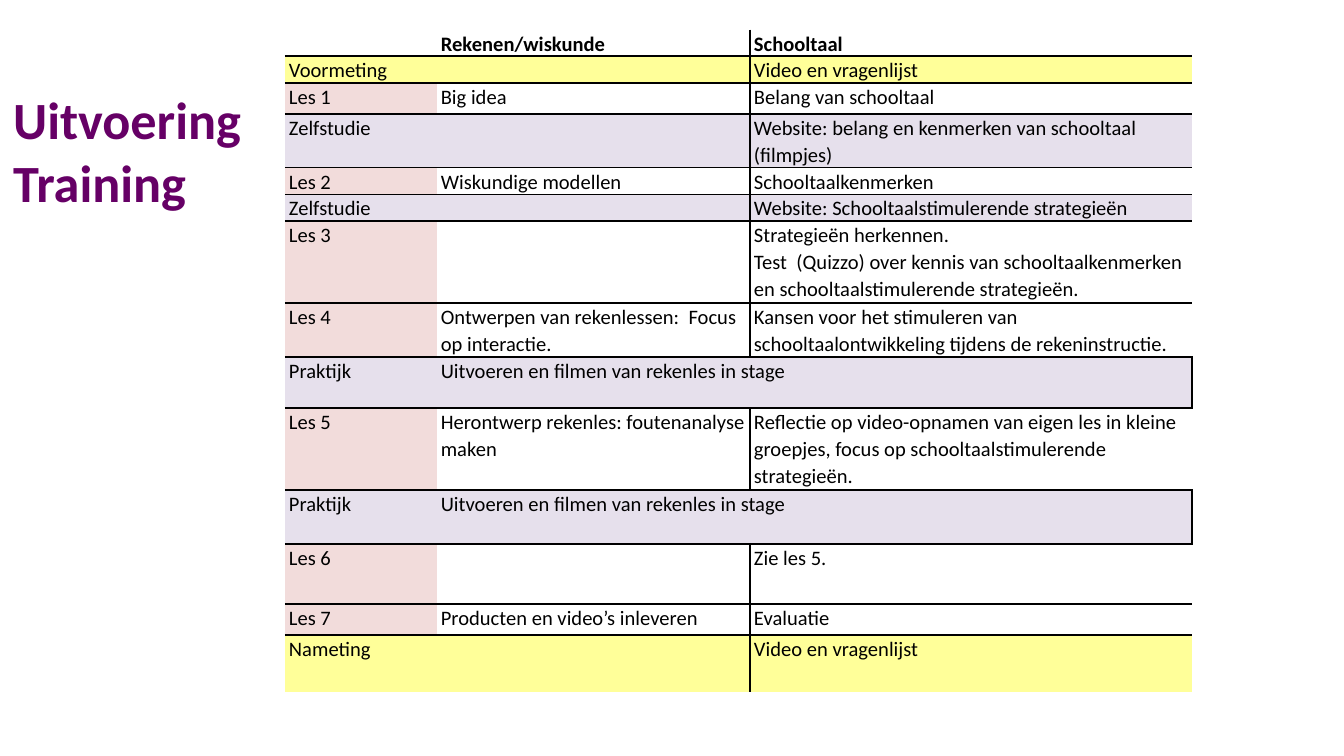
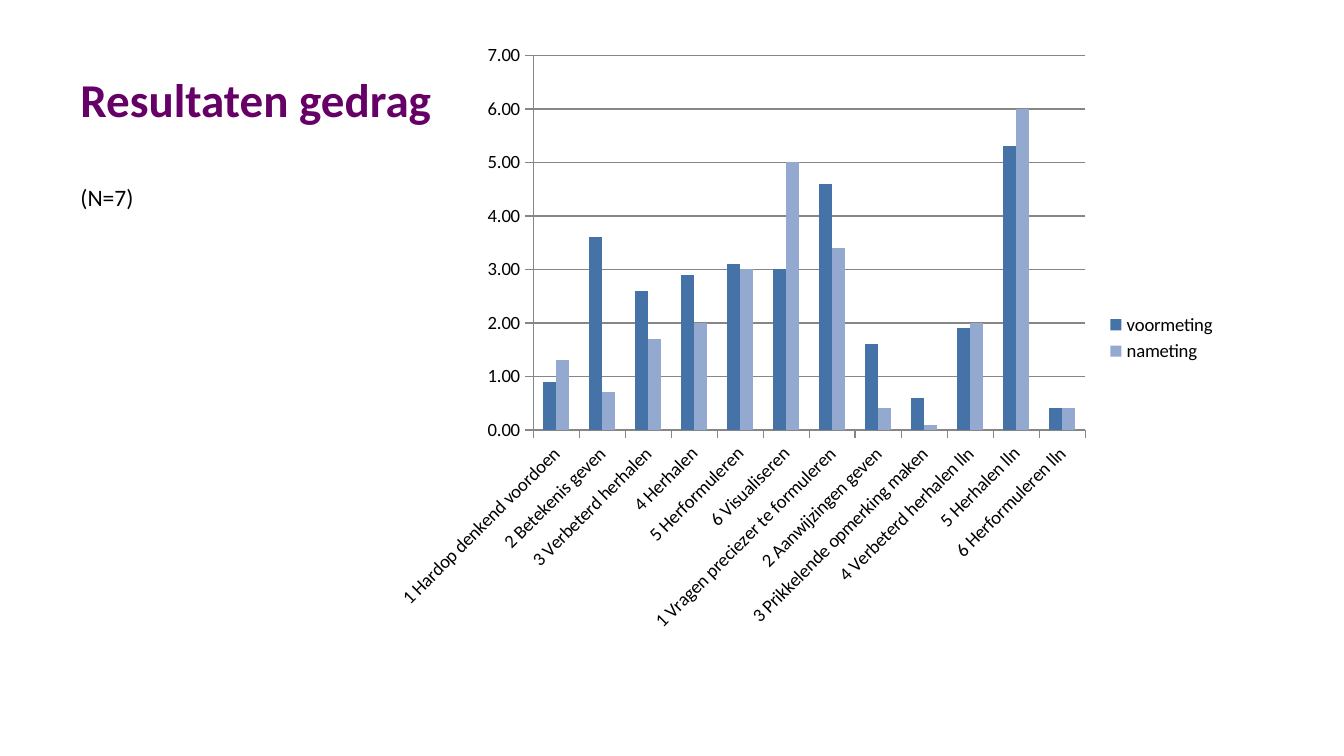
from dataclasses import dataclass
from enum import Enum
from typing import NamedTuple

from lxml import etree
from pptx import Presentation
from pptx.chart.data import CategoryChartData
from pptx.dml.color import RGBColor
from pptx.enum import chart as ch, text
from pptx.oxml import ns, parse_xml
from pptx.util import Inches, Pt


@dataclass(frozen=True)
class Theme:
    font: str = "Calibri"
    title: RGBColor = RGBColor(0x66, 0x00, 0x66)
    ink: RGBColor = RGBColor(0, 0, 0)
    paper: RGBColor = RGBColor(0xFF, 0xFF, 0xFF)
    yellow: RGBColor = RGBColor(0xFF, 0xFF, 0x99)
    pink: RGBColor = RGBColor(0xF2, 0xDC, 0xDB)
    lilac: RGBColor = RGBColor(0xE6, 0xE0, 0xEC)
    grid: RGBColor = RGBColor(0x86, 0x86, 0x86)
    before: RGBColor = RGBColor(0x45, 0x72, 0xA7)
    after: RGBColor = RGBColor(0x93, 0xA9, 0xCF)
    title_size: float = 28
    chart_title_size: float = 25.2
    note_size: float = 12.6
    table_size: float = 11
    chart_size: float = 10


THEME = Theme()


class Kind(Enum):
    """Fills of the label cell and of the other cells in a row."""
    HEADER = (THEME.paper, THEME.paper)
    MEASUREMENT = (THEME.yellow, THEME.yellow)
    LESSON = (THEME.pink, THEME.paper)
    PRACTICE = (THEME.lilac, THEME.lilac)


class Row(NamedTuple):
    kind: Kind
    height: float
    label: str
    maths: str = ""
    language: str = ""
    merged: bool = False


class Line(NamedTuple):
    text: str
    size: float
    color: RGBColor
    bold: bool = True
    before: float = 0


class Series(NamedTuple):
    name: str
    color: RGBColor
    values: tuple[float, ...]


FILMING = "Uitvoeren en filmen van rekenles in stage"
COLUMNS = (1.13, 2.33, 3.29)
ROWS = (
    Row(Kind.HEADER, 0.19, "", "Rekenen/wiskunde", "Schooltaal"),
    Row(Kind.MEASUREMENT, 0.2, "Voormeting", "", "Video en vragenlijst"),
    Row(Kind.LESSON, 0.23, "Les 1", "Big idea", "Belang van schooltaal"),
    Row(Kind.PRACTICE, 0.4, "Zelfstudie", "",
        "Website: belang en kenmerken van schooltaal (filmpjes)"),
    Row(Kind.LESSON, 0.2, "Les 2", "Wiskundige modellen", "Schooltaalkenmerken"),
    Row(Kind.PRACTICE, 0.2, "Zelfstudie", "",
        "Website: Schooltaalstimulerende strategieën"),
    Row(Kind.LESSON, 0.61, "Les 3", "",
        "Strategieën herkennen.\nTest  (Quizzo) over kennis van "
        "schooltaalkenmerken en schooltaalstimulerende strategieën."),
    Row(Kind.LESSON, 0.4, "Les 4", "Ontwerpen van rekenlessen:  Focus op interactie.",
        "Kansen voor het stimuleren van schooltaalontwikkeling tijdens de "
        "rekeninstructie."),
    Row(Kind.PRACTICE, 0.38, "Praktijk", FILMING, merged=True),
    Row(Kind.LESSON, 0.61, "Les 5", "Herontwerp rekenles: foutenanalyse maken",
        "Reflectie op video-opnamen van eigen les in kleine groepjes, focus op "
        "schooltaalstimulerende strategieën."),
    Row(Kind.PRACTICE, 0.4, "Praktijk", FILMING, merged=True),
    Row(Kind.LESSON, 0.45, "Les 6", "", "Zie les 5."),
    Row(Kind.LESSON, 0.23, "Les 7", "Producten en video’s inleveren", "Evaluatie"),
    Row(Kind.MEASUREMENT, 0.42, "Nameting", "", "Video en vragenlijst"),
)

CATEGORIES = (
    "1 Hardop denkend voordoen", "2 Betekenis geven", "3 Verbeterd herhalen",
    "4 Herhalen", "5 Herformuleren", "6 Visualiseren",
    "1 Vragen preciezer te formuleren", "2 Aanwijzingen geven",
    "3 Prikkelende opmerking maken", "4 Verbeterd herhalen lln",
    "5 Herhalen lln", "6 Herformuleren lln",
)
SERIES = (
    Series("voormeting", THEME.before,
           (0.9, 3.6, 2.6, 2.9, 3.1, 3, 4.6, 1.6, 0.6, 1.9, 5.3, 0.4)),
    Series("nameting", THEME.after,
           (1.3, 0.7, 1.7, 2, 3, 5, 3.4, 0.4, 0.1, 2, 6, 0.4)),
)


def style_font(font, size: float, color: RGBColor = THEME.ink, bold: bool = False) -> None:
    font.name, font.size, font.bold = THEME.font, Pt(size), bold
    font.color.rgb = color


def add_title(s, left: float, top: float, width: float, height: float, *lines: Line) -> None:
    box = s.shapes.add_textbox(Inches(left), Inches(top), Inches(width), Inches(height))
    tf = box.text_frame
    tf.word_wrap = True
    tf.vertical_anchor = text.MSO_ANCHOR.MIDDLE
    for i, line in enumerate(lines):
        p = tf.add_paragraph() if i else tf.paragraphs[0]
        p.text = line.text
        if line.before:
            p.space_before = Pt(line.before)
        style_font(p.font, line.size, line.color, line.bold)


def set_borders(cell, sides: str) -> None:
    """Draw the named sides (of L, R, T, B) and clear the others."""
    props = cell._tc.get_or_add_tcPr()
    for side in "LRTB":
        ln = etree.SubElement(props, ns.qn(f"a:ln{side}"), w=str(Pt(1)))
        if side in sides:
            fill = etree.SubElement(ln, ns.qn("a:solidFill"))
            etree.SubElement(fill, ns.qn("a:srgbClr"), val=str(THEME.ink))
        else:
            etree.SubElement(ln, ns.qn("a:noFill"))


def fill_cell(cell, content: str, fill: RGBColor, bold: bool, sides: str) -> None:
    set_borders(cell, sides)
    cell.fill.solid()
    cell.fill.fore_color.rgb = fill
    cell.margin_left = cell.margin_right = Inches(0.03)
    cell.margin_top = cell.margin_bottom = 0
    cell.text_frame.text = content
    for p in cell.text_frame.paragraphs:
        p.line_spacing = 1.07
        style_font(p.font, THEME.table_size, bold=bold)
        if not content:
            p._p.get_or_add_endParaRPr().set("sz", str(THEME.table_size * 100))


def add_programme(s) -> None:
    frame = s.shapes.add_table(len(ROWS), len(COLUMNS), Inches(2.12), Inches(0.22),
                               Inches(sum(COLUMNS)), Inches(sum(r.height for r in ROWS)))
    table = frame.table
    table.first_row = table.horz_banding = False
    for column, width in zip(table.columns, COLUMNS):
        column.width = Inches(width)
    for i, row in enumerate(ROWS):
        table.rows[i].height = Inches(row.height)
        across = ("T" if i else "") + ("B" if i < len(ROWS) - 1 else "")
        upright = ("", "R", "R" if row.merged else "L")
        label_fill, fill = row.kind.value
        for j, content in enumerate((row.label, row.maths, row.language)):
            fill_cell(table.cell(i, j), content, fill if j else label_fill,
                      row.kind is Kind.HEADER, upright[j] + across)
        if row.merged:
            table.cell(i, 1).merge(table.cell(i, 2))


def set_plot_layout(chart, **fractions: float) -> None:
    """Fix the inner plot area, in fractions of the chart frame."""
    area = chart._chartSpace.chart.plotArea
    for old in area.findall(ns.qn("c:layout")):
        area.remove(old)
    values = "".join(f'<c:{k} val="{v}"/>' for k, v in fractions.items())
    area.insert(0, parse_xml(
        f'<c:layout {ns.nsdecls("c")}><c:manualLayout><c:layoutTarget val="inner"/>'
        f'<c:xMode val="edge"/><c:yMode val="edge"/>{values}'
        '</c:manualLayout></c:layout>'))


def add_results(s) -> None:
    data = CategoryChartData(number_format="0.00")
    data.categories = CATEGORIES
    for series in SERIES:
        data.add_series(series.name, series.values)
    chart = s.shapes.add_chart(ch.XL_CHART_TYPE.COLUMN_CLUSTERED, Inches(2.83), Inches(0.23),
                               Inches(6.32), Inches(4.57), data).chart
    style_font(chart.font, THEME.chart_size)
    chart.has_title = False
    chart.has_legend = True
    chart.legend.position = ch.XL_LEGEND_POSITION.RIGHT
    chart.legend.include_in_layout = False
    set_plot_layout(chart, x=0.18, y=0.04, w=0.65, h=0.61)

    plot = chart.plots[0]
    plot.gap_width, plot.overlap, plot.vary_by_categories = 150, 0, False
    for drawn, series in zip(plot.series, SERIES):
        drawn.format.fill.solid()
        drawn.format.fill.fore_color.rgb = series.color

    cat, val = chart.category_axis, chart.value_axis
    for axis in (cat, val):
        axis.major_tick_mark = ch.XL_TICK_MARK.OUTSIDE
        axis.minor_tick_mark = ch.XL_TICK_MARK.NONE
        axis.format.line.color.rgb = THEME.grid
        style_font(axis.tick_labels.font, THEME.chart_size)
    cat._element.txPr.bodyPr.set("rot", str(-45 * 60000))
    val.minimum_scale, val.maximum_scale, val.major_unit = 0, 7, 1
    val.has_major_gridlines = True
    val.major_gridlines.format.line.color.rgb = THEME.grid
    val.tick_labels.number_format = "0.00"
    val.tick_labels.number_format_is_linked = False


def main() -> None:
    prs = Presentation()
    prs.slide_width = Inches(10)
    prs.slide_height = Inches(10 * 9 / 16)
    blank = prs.slide_layouts[6]

    s = prs.slides.add_slide(blank)
    add_title(s, 0, 0.47, 1.92, 1.29,
              Line("Uitvoering Training", THEME.title_size, THEME.title))
    add_programme(s)

    s = prs.slides.add_slide(blank)
    add_title(s, 0.5, 0.23, 2.95, 1.63,
              Line("Resultaten gedrag", THEME.chart_title_size, THEME.title),
              Line("(N=7)", THEME.note_size, THEME.ink, bold=False, before=30))
    add_results(s)

    prs.save("out.pptx")


if __name__ == "__main__":
    main()
